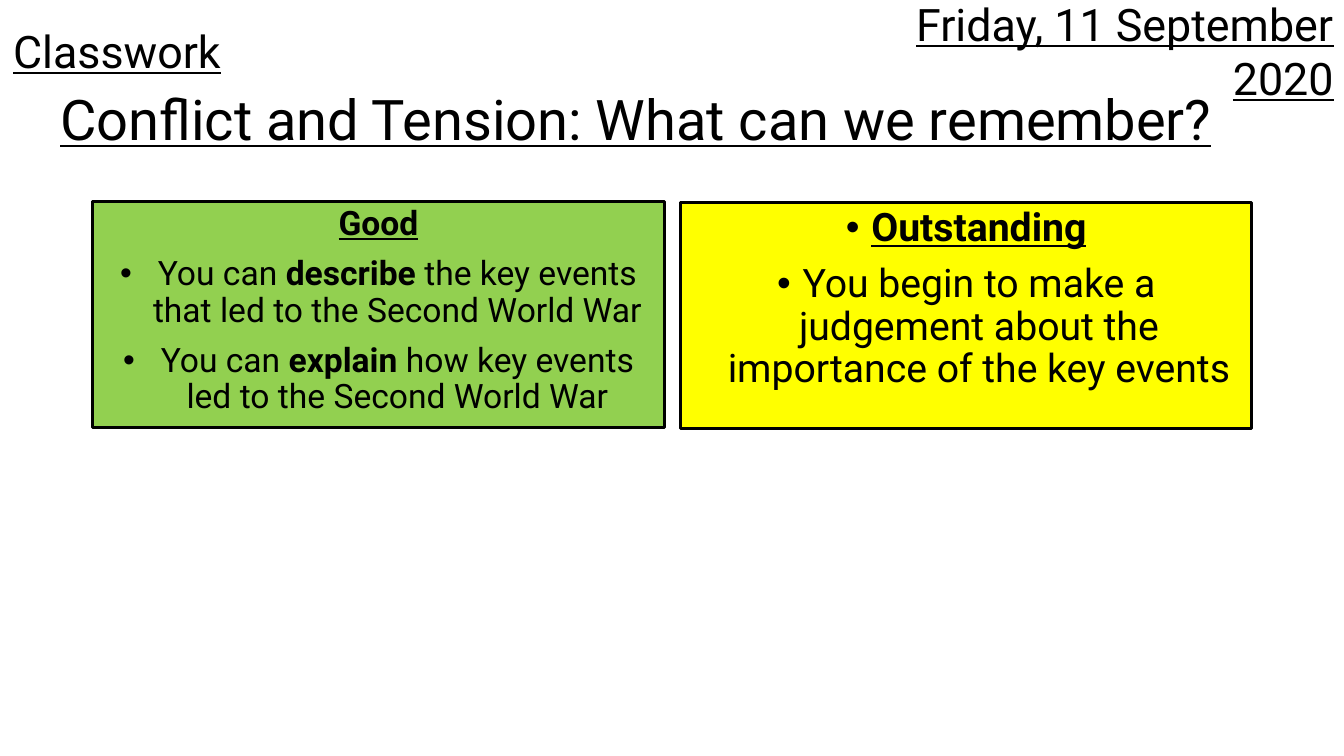
from lxml.etree import SubElement
from pptx import Presentation
from pptx.dml.color import RGBColor
from pptx.enum.shapes import MSO_SHAPE as Shape
from pptx.enum.text import MSO_ANCHOR as Anchor, PP_ALIGN as Align
from pptx.oxml.ns import qn
from pptx.util import Cm, Pt

BLACK = RGBColor(0x00, 0x00, 0x00)
WHITE = RGBColor(0xFF, 0xFF, 0xFF)
GREEN = RGBColor(0x92, 0xD0, 0x50)
YELLOW = RGBColor(0xFF, 0xFF, 0x00)

FONT = "Roboto"
LINE_SPACING = 0.9


def add_span(para, text, size, bold=False, underline=False):
    """Append formatted text to a paragraph."""
    span = para.add_run()
    span.text = text
    font = span.font
    font.name, font.size, font.color.rgb = FONT, Pt(size), BLACK
    font.bold, font.underline = bold, underline


def add_bullet(para, indent):
    """Give a paragraph a round bullet with a hanging indent."""
    properties = para._p.get_or_add_pPr()
    properties.set("marL", str(Cm(indent)))
    properties.set("indent", str(-Cm(indent)))
    SubElement(properties, qn("a:buFont")).set("typeface", "Arial")
    SubElement(properties, qn("a:buChar")).set("char", "•")


class LessonSlide:
    def __init__(self, deck):
        self.page = deck.slides.add_slide(deck.slide_layouts[6])

    def label(self, text, left, width, align):
        """Underlined text along the top edge."""
        box = self.page.shapes.add_textbox(Cm(left), 0, Cm(width), Cm(2.54))
        frame = box.text_frame
        frame.word_wrap = True
        frame.vertical_anchor = Anchor.MIDDLE
        para = frame.paragraphs[0]
        para.alignment = align
        add_span(para, text, 32, underline=True)

    def panel(self, left, top, width, height, fill, anchor, outlined=True):
        """Filled rectangle; returns its text frame."""
        box = self.page.shapes.add_shape(
            Shape.RECTANGLE, Cm(left), Cm(top), Cm(width), Cm(height))
        box.shadow.inherit = False
        box.fill.solid()
        box.fill.fore_color.rgb = fill
        if outlined:
            box.line.color.rgb = BLACK
            box.line.width = Pt(2.25)
        else:
            box.line.fill.background()
        frame = box.text_frame
        frame.word_wrap = True
        frame.vertical_anchor = anchor
        return frame

    def title(self, text):
        frame = self.panel(0.38, 1.96, 31.29, 2.01, WHITE, Anchor.BOTTOM,
                           outlined=False)
        para = frame.paragraphs[0]
        para.alignment = Align.CENTER
        para.line_spacing = LINE_SPACING
        add_span(para, text, 40, underline=True)

    def criteria(self, left, top, fill, size, indent, heading, points,
                 heading_bullet=False):
        """Success criteria; each point is a list of (text, bold) pairs."""
        frame = self.panel(left, top, 14.4, 5.69, fill, Anchor.TOP)
        for index, spans in enumerate([[(heading, True)], *points]):
            is_heading = index == 0
            para = frame.paragraphs[0] if is_heading else frame.add_paragraph()
            para.alignment = Align.CENTER
            para.line_spacing = LINE_SPACING
            para.space_before = Pt(10)
            if heading_bullet or not is_heading:
                add_bullet(para, indent)
            for text, bold in spans:
                add_span(para, text, size, bold=bold, underline=is_heading)


def main():
    deck = Presentation()
    deck.slide_width, deck.slide_height = Cm(33.87), Cm(19.05)
    lesson = LessonSlide(deck)

    # Title, date and kind of work
    lesson.title("Conflict and Tension: What can we remember?")
    lesson.label("Friday, 11 September 2020", 20.04, 13.82, Align.RIGHT)
    lesson.label("Classwork", 0.08, 6.2, Align.LEFT)

    # Success criteria
    lesson.criteria(2.34, 5.08, GREEN, 24, 0.95, "Good", [
        [("You can ", False), ("describe", True),
         (" the key events that led to the Second World War", False)],
        [("You can ", False), ("explain", True),
         (" how key events led to the Second World War", False)],
    ])
    lesson.criteria(17.15, 5.11, YELLOW, 28, 0.64, "Outstanding", [
        [("You begin to make a judgement about the importance of the key events",
          False)],
    ], heading_bullet=True)

    deck.save("out.pptx")


if __name__ == "__main__":
    main()
